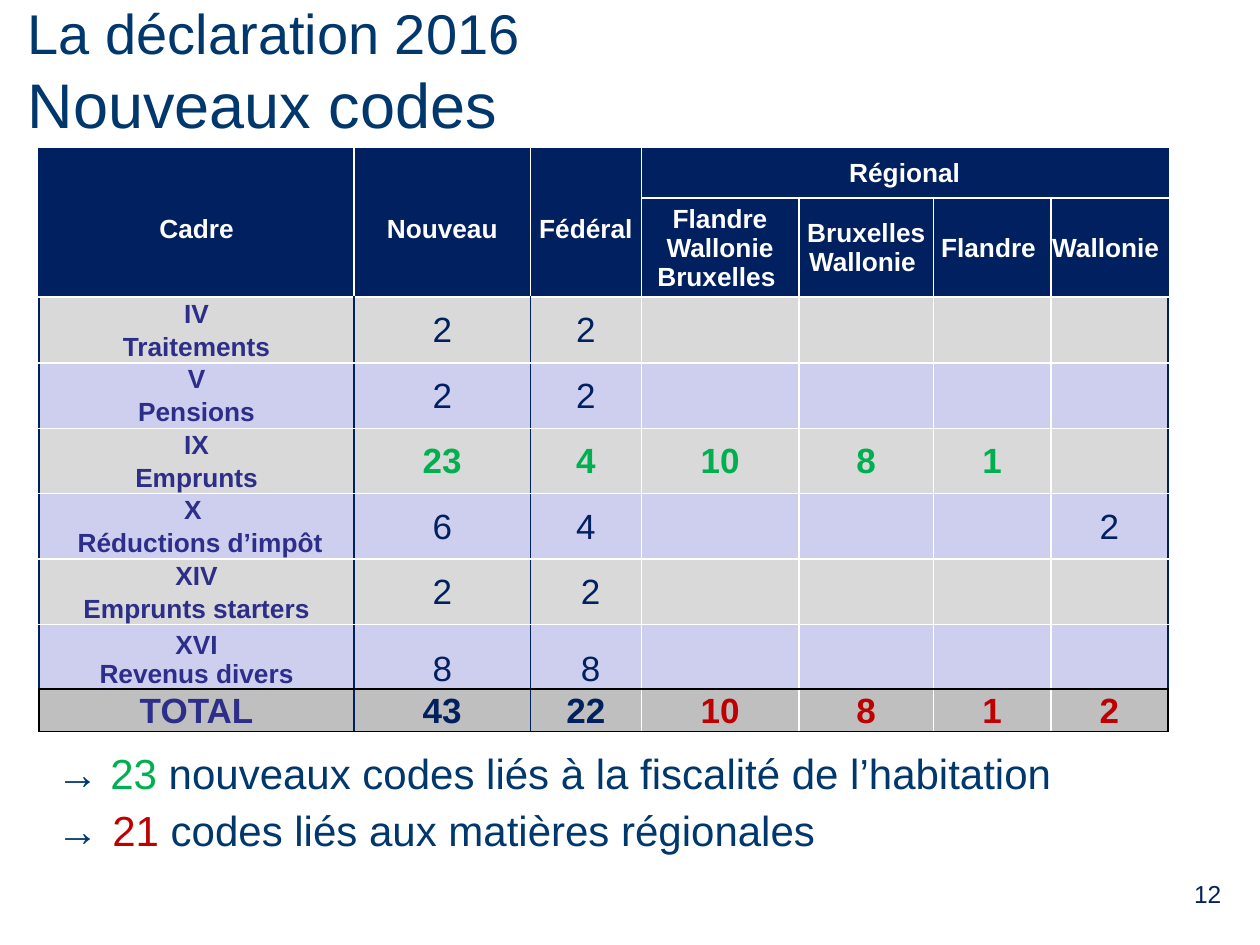
"""Build the slide on the new codes of the 2016 tax declaration."""
from dataclasses import dataclass
from typing import Optional

from pptx import Presentation
from pptx.dml.color import RGBColor
from pptx.enum import text
from pptx.oxml import ns
from pptx.util import Inches, Pt
from lxml import etree


@dataclass(frozen=True)
class Theme:
    font: str = "Arial"
    heading: str = "00376D"
    navy: str = "002060"
    label: str = "2D2D8A"
    green: str = "00B050"
    red: str = "C00000"
    white: str = "FFFFFF"
    black: str = "000000"
    grey: str = "D9D9D9"
    lilac: str = "CECEEF"
    total: str = "BFBFBF"
    title_size: int = 32
    subtitle_size: int = 36
    takeaway_size: int = 24
    gap_size: int = 28
    figure_size: int = 20
    label_size: int = 15
    page_size: int = 14


@dataclass(frozen=True)
class Span:
    row: int
    column: int
    rows: int = 1
    columns: int = 1


@dataclass(frozen=True)
class Style:
    size: int
    color: str
    bold: bool = False


@dataclass(frozen=True)
class Frame:
    number: str
    name: str
    figures: tuple[str, ...]
    highlighted: bool = False


@dataclass(frozen=True)
class Edge:
    color: str
    width: float = 1


THEME = Theme()
WIDTHS = (2.5, 1.4, 0.88, 1.25, 1.07, 0.93, 0.93)
HEIGHTS = (0.39, 0.79, *[0.26] * 10, 0.51, 0.34)
LAST = len(HEIGHTS) - 1
TOP = text.MSO_ANCHOR.TOP
MIDDLE = text.MSO_ANCHOR.MIDDLE
BOTTOM = text.MSO_ANCHOR.BOTTOM

HEADERS = (
    (Span(0, 0, rows=2), "Cadre"),
    (Span(0, 1, rows=2), "Nouveau"),
    (Span(0, 2, rows=2), "Fédéral"),
    (Span(0, 3, columns=4), "Régional"),
    (Span(1, 3), "Flandre Wallonie Bruxelles "),
    (Span(1, 4), "Bruxelles Wallonie "),
    (Span(1, 5), "Flandre "),
    (Span(1, 6), "Wallonie "),
)
FRAMES = (
    Frame("IV", "Traitements", ("2", "2", "", "", "", "")),
    Frame("V", "Pensions", ("2", "2", "", "", "", "")),
    Frame("IX", "Emprunts", ("23", "4", "10", "8", "1", ""), highlighted=True),
    Frame("X ", " Réductions d’impôt", ("6", "4", "", "", "", "2")),
    Frame("XIV", "Emprunts starters", ("2", " 2", "", "", "", "")),
    Frame("XVI", "Revenus divers", ("8", " 8", "", "", "", "")),
)
TOTALS = ("TOTAL", "43", "22", "10", "8", "1", "2")


def add_run(paragraph, words: str, style: Style) -> None:
    """Append one formatted run."""
    run = paragraph.add_run()
    run.text = words
    run.font.name = THEME.font
    run.font.size = Pt(style.size)
    run.font.bold = style.bold
    run.font.color.rgb = RGBColor.from_string(style.color)


def place(shape, left: float, top: float, width: float, height: float, anchor) -> None:
    """Position a text shape and fix how its text sits."""
    shape.left, shape.top = Inches(left), Inches(top)
    shape.width, shape.height = Inches(width), Inches(height)
    shape.text_frame.word_wrap = True
    shape.text_frame.auto_size = text.MSO_AUTO_SIZE.NONE
    shape.text_frame.vertical_anchor = anchor


def horizontal_edge(line: int, column: int) -> Optional[Edge]:
    """Return the rule on a horizontal grid line."""
    if line == 0:
        return Edge(THEME.navy)
    if line >= LAST:
        return Edge(THEME.black)
    if line <= 2:
        return Edge(THEME.white, 1.5) if line == 2 or column >= 3 else None
    return Edge(THEME.white) if line % 2 == 0 else None


def vertical_edge(line: int, row: int) -> Optional[Edge]:
    """Return the rule on a vertical grid line."""
    if line in (0, len(WIDTHS)):
        return Edge(THEME.black if row == LAST else THEME.navy)
    if row == 0 and line > 3:
        return None
    return Edge(THEME.navy if row >= 2 and line <= 2 else THEME.white)


def draw_edge(cell, side: str, edge: Optional[Edge]) -> None:
    """Add one border to a cell."""
    rule = etree.SubElement(cell._tc.get_or_add_tcPr(), ns.qn(f"a:ln{side}"))
    if edge is None:
        etree.SubElement(rule, ns.qn("a:noFill"))
        return
    rule.set("w", str(Pt(edge.width)))
    fill = etree.SubElement(rule, ns.qn("a:solidFill"))
    etree.SubElement(fill, ns.qn("a:srgbClr")).set("val", edge.color)


def draw_cell(table, span: Span, lines: tuple[str, ...], style: Style, fill: str,
              anchor=MIDDLE, top: float = 0.01) -> None:
    """Merge, rule, fill and write one area of the table."""
    below, after = span.row + span.rows, span.column + span.columns
    origin = table.cell(span.row, span.column)
    if span.rows * span.columns > 1:
        origin.merge(table.cell(below - 1, after - 1))
    for row in range(span.row, below):
        for column in range(span.column, after):
            cell = table.cell(row, column)
            first = cell.is_merge_origin
            draw_edge(cell, "L", vertical_edge(column, row))
            draw_edge(cell, "R", vertical_edge(after if first else column + 1, row))
            draw_edge(cell, "T", horizontal_edge(row, column))
            draw_edge(cell, "B", horizontal_edge(below if first else row + 1, column))
            cell.fill.solid()
            cell.fill.fore_color.rgb = RGBColor.from_string(fill)
            cell.margin_left = cell.margin_right = Inches(0.01)
            cell.margin_top, cell.margin_bottom = Inches(top), 0
            cell.vertical_anchor = anchor
    for index, words in enumerate(lines):
        frame = origin.text_frame
        paragraph = frame.add_paragraph() if index else frame.paragraphs[0]
        paragraph.alignment = text.PP_ALIGN.CENTER
        if words:
            add_run(paragraph, words, style)


def draw_codes(slide) -> None:
    """Draw the table of new codes by frame and region."""
    table = slide.shapes.add_table(len(HEIGHTS), len(WIDTHS), Inches(0.31), Inches(1.18),
                                   Inches(sum(WIDTHS)), Inches(sum(HEIGHTS))).table
    table.first_row = table.horz_banding = False
    for column, width in zip(table.columns, WIDTHS):
        column.width = Inches(width)
    for row, height in zip(table.rows, HEIGHTS):
        row.height = Inches(height)
    header = Style(THEME.label_size, THEME.white, True)
    label = Style(THEME.label_size, THEME.label, True)
    for span, words in HEADERS:
        draw_cell(table, span, (words,), header, THEME.navy, top=0.1 if span.rows == 2 else 0.01)
    for index, frame in enumerate(FRAMES):
        row = 2 + 2 * index
        fill = THEME.lilac if index % 2 else THEME.grey
        rows = 1 if row == LAST - 1 else 2
        anchor = BOTTOM if rows == 1 else MIDDLE
        if rows == 1:
            draw_cell(table, Span(row, 0), (frame.number, frame.name), label, fill, anchor)
        else:
            for offset, words in enumerate((frame.number, frame.name)):
                draw_cell(table, Span(row + offset, 0), (words,), label, fill)
        color = THEME.green if frame.highlighted else THEME.navy
        style = Style(THEME.figure_size, color, frame.highlighted)
        for column, figure in enumerate(frame.figures, 1):
            draw_cell(table, Span(row, column, rows), (figure,), style, fill, anchor)
    colors = (THEME.label, *[THEME.navy] * 2, *[THEME.red] * 4)
    for column, (words, color) in enumerate(zip(TOTALS, colors)):
        draw_cell(table, Span(LAST, column), (words,),
                  Style(THEME.figure_size, color, True), THEME.total)


def write_takeaways(body) -> None:
    """Write the two conclusions under the table."""
    place(body, 0.35, 5.88, 8.82, 1.45, TOP)
    plain = Style(THEME.takeaway_size, THEME.heading)
    green = Style(THEME.takeaway_size, THEME.green)
    red = Style(THEME.takeaway_size, THEME.red)
    gap = Style(THEME.gap_size, THEME.heading)
    takeaways = (
        (("→ ", plain), ("23", green),
         (" nouveaux codes liés à la fiscalité de l’habitation", plain)),
        (("→", plain), (" ", gap), ("21", red), (" codes liés aux matières régionales", plain)),
    )
    for index, runs in enumerate(takeaways):
        frame = body.text_frame
        paragraph = frame.add_paragraph() if index else frame.paragraphs[0]
        properties = paragraph._p.get_or_add_pPr()
        properties.set("marL", "0")
        properties.set("indent", "0")
        etree.SubElement(properties, ns.qn("a:buNone"))
        paragraph.space_before = Pt(0)
        for words, style in runs:
            add_run(paragraph, words, style)


def main() -> None:
    """Assemble and save the slide."""
    deck = Presentation()
    deck.slide_width, deck.slide_height = Inches(10), Inches(7.5)
    slide = deck.slides.add_slide(deck.slide_layouts[1])
    title, body = slide.placeholders
    place(title, 0.12, 0.15, 9.37, 0.81, MIDDLE)
    heading = title.text_frame.paragraphs[0]
    heading.alignment = text.PP_ALIGN.LEFT
    add_run(heading, "La déclaration 2016", Style(THEME.title_size, THEME.heading))
    heading.add_line_break()
    add_run(heading, "Nouveaux codes", Style(THEME.subtitle_size, THEME.heading))
    write_takeaways(body)
    draw_codes(slide)
    page = slide.shapes.add_textbox(0, 0, 0, 0)
    place(page, 9.21, 6.93, 0.75, 0.52, TOP)
    number = page.text_frame.paragraphs[0]
    number.alignment = text.PP_ALIGN.CENTER
    add_run(number, "12", Style(THEME.page_size, THEME.navy))
    deck.save("out.pptx")


if __name__ == "__main__":
    main()
